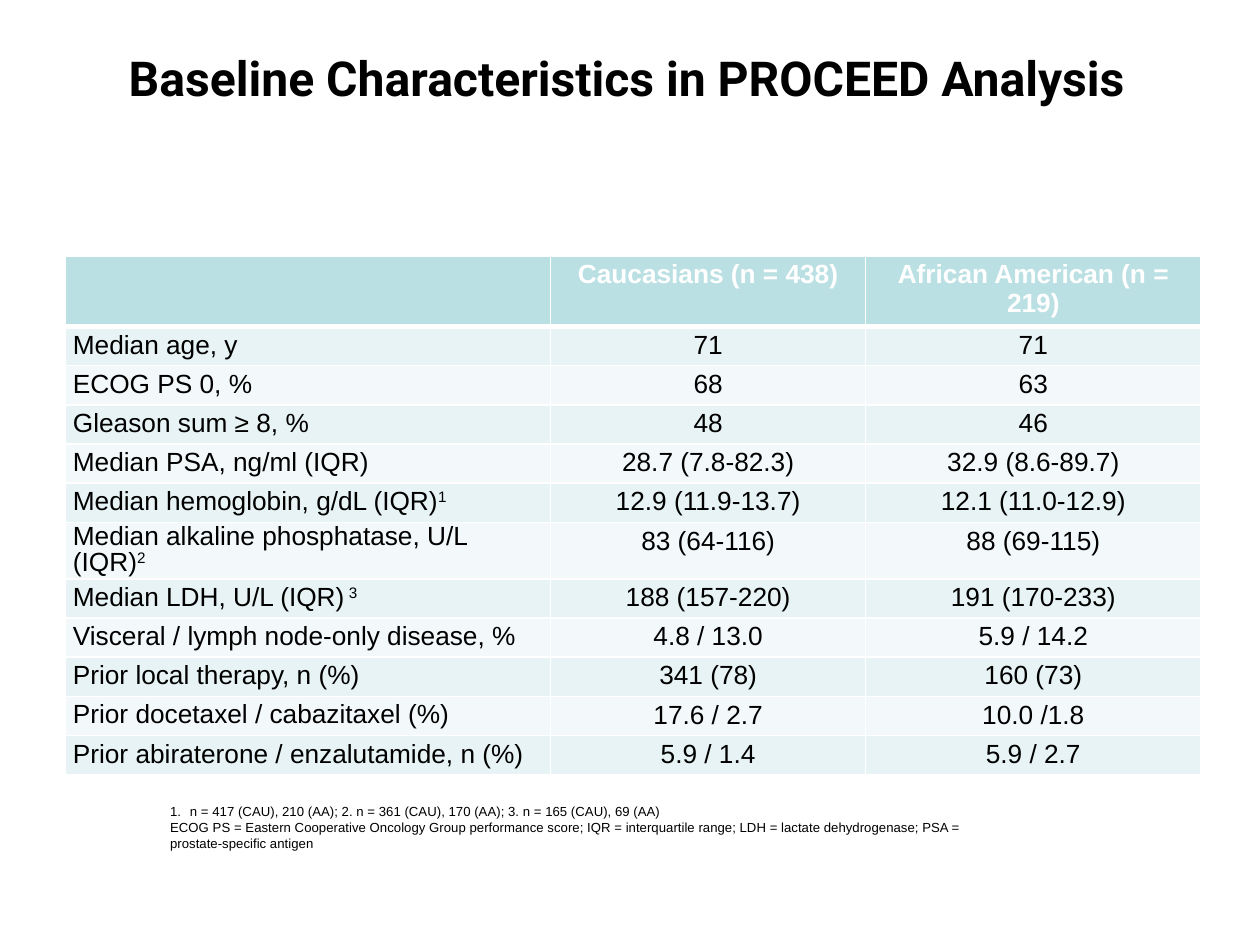
import pptx
import pptx.dml.color
import pptx.enum.text
import pptx.oxml
import pptx.oxml.ns
import pptx.util
from pptx.util import Cm

RGBColor = pptx.dml.color.RGBColor
BLACK = RGBColor(0x00, 0x00, 0x00)
WHITE = RGBColor(0xFF, 0xFF, 0xFF)
HEADER = RGBColor(0xBB, 0xE0, 0xE3)
BANDS = (RGBColor(0xE7, 0xF3, 0xF4), RGBColor(0xF3, 0xF9, 0xFA))

ROWS = [
    ("", "Caucasians (n = 438)", "African American (n = 219)"),
    ("Median age, y", "71", "71"),
    ("ECOG PS 0, %", "68", "63"),
    ("Gleason sum ≥ 8, %", "48", "46"),
    ("Median PSA, ng/ml (IQR)", "28.7 (7.8-82.3)", "32.9 (8.6-89.7)"),
    ("Median hemoglobin, g/dL (IQR)^1", "12.9 (11.9-13.7)", "12.1 (11.0-12.9)"),
    ("Median alkaline phosphatase, U/L (IQR)^2", "83 (64-116)", "88 (69-115)"),
    ("Median LDH, U/L (IQR)^ 3", "188 (157-220)", "191 (170-233)"),
    ("Visceral / lymph node-only disease, %", "4.8 / 13.0", "5.9 / 14.2"),
    ("Prior local therapy, n (%)", "341 (78)", "160 (73)"),
    ("Prior docetaxel / cabazitaxel (%)", "17.6 / 2.7", "10.0 /1.8"),
    ("Prior abiraterone / enzalutamide, n (%)", "5.9 / 1.4", "5.9 / 2.7"),
]
COLUMN_WIDTHS = (9.78, 6.35, 6.76)
HEADER_HEIGHT, ROW_HEIGHT, TALL_HEIGHT = 1.42, 0.79, 1.14
TALL_ROW = 6
FIRST_TIGHT_ROW = 5
NOTES = [
    "n = 417 (CAU), 210 (AA); 2. n = 361 (CAU), 170 (AA); 3. n = 165 (CAU), 69 (AA)",
    "ECOG PS = Eastern Cooperative Oncology Group performance score; IQR = interquartile range; "
    "LDH = lactate dehydrogenase; PSA = prostate-specific antigen",
]


class Deck:
    """Holds the text style and the current slide."""

    def __init__(self, prs, font="Arial"):
        self.s = prs.slides.add_slide(prs.slide_layouts[5])
        self.font = font

    def style(self, p, size, color=BLACK, bold=False, font=None):
        for r in p.runs:
            r.font.name = font or self.font
            r.font.size = pptx.util.Pt(size)
            r.font.bold = bold
            r.font.color.rgb = color

    def title(self, text, x, y, w, h):
        sp = self.s.shapes.title
        sp.left, sp.top, sp.width, sp.height = Cm(x), Cm(y), Cm(w), Cm(h)
        tf = sp.text_frame
        tf.text = text
        tf.vertical_anchor = pptx.enum.text.MSO_ANCHOR.TOP
        p = tf.paragraphs[0]
        p.alignment = pptx.enum.text.PP_ALIGN.LEFT
        self.style(p, 27.5, bold=True, font="Roboto")

    def borders(self, cell, top, bottom):
        tcPr = cell._tc.get_or_add_tcPr()
        for side, width in (("L", 1), ("R", 1), ("T", top), ("B", bottom)):
            tcPr.append(pptx.oxml.parse_xml(
                f'<a:ln{side} {pptx.oxml.ns.nsdecls("a")} w="{pptx.util.Pt(width)}">'
                f'<a:solidFill><a:srgbClr val="{WHITE}"/></a:solidFill></a:ln{side}>'))

    def cell(self, cell, text, row, col):
        header = row == 0
        tight = col == 0 and row >= FIRST_TIGHT_ROW
        self.borders(cell, 3 if row == 1 else 1, 3 if header else 1)
        cell.fill.solid()
        cell.fill.fore_color.rgb = HEADER if header else BANDS[(row - 1) % 2]
        cell.margin_left = cell.margin_right = Cm(0.15)
        cell.margin_top = cell.margin_bottom = Cm(0 if tight else 0.08)
        p = cell.text_frame.paragraphs[0]
        main, _, mark = text.partition("^")
        p.text = main
        if mark:
            r = p.add_run()
            r.text = mark
            r._r.get_or_add_rPr().set("baseline", "30000")
        if tight:
            cell.vertical_anchor = pptx.enum.text.MSO_ANCHOR.MIDDLE
            p.line_spacing = 0.9
        if col:
            p.alignment = pptx.enum.text.PP_ALIGN.CENTER
        self.style(p, 15, WHITE if header else BLACK, header)

    def table(self, rows, widths, heights, x, y):
        table = self.s.shapes.add_table(
            len(rows), len(widths), Cm(x), Cm(y), Cm(sum(widths)), Cm(sum(heights))).table
        for column, width in zip(table.columns, widths):
            column.width = Cm(width)
        for i, (texts, height) in enumerate(zip(rows, heights)):
            table.rows[i].height = Cm(height)
            for j, text in enumerate(texts):
                self.cell(table.cell(i, j), text, i, j)

    def notes(self, lines, x, y, w, h):
        tf = self.s.shapes.add_textbox(Cm(x), Cm(y), Cm(w), Cm(h)).text_frame
        tf.word_wrap = True
        tf.text = "\n".join(lines)
        pPr = tf.paragraphs[0]._p.get_or_add_pPr()
        pPr.set("marL", str(Cm(0.4)))
        pPr.set("indent", str(-Cm(0.4)))
        pPr.append(pptx.oxml.parse_xml(
            f'<a:buAutoNum {pptx.oxml.ns.nsdecls("a")} type="arabicPeriod"/>'))
        for p in tf.paragraphs:
            self.style(p, 7.5)


def main():
    prs = pptx.Presentation()
    prs.slide_width, prs.slide_height = Cm(25.4), Cm(19.05)
    deck = Deck(prs)
    heights = [ROW_HEIGHT] * len(ROWS)
    heights[0], heights[TALL_ROW] = HEADER_HEIGHT, TALL_HEIGHT
    deck.title("Baseline Characteristics in PROCEED Analysis", 2.34, 0.84, 22.22, 1.85)
    deck.table(ROWS, COLUMN_WIDTHS, heights, 1.32, 5.16)
    deck.notes(NOTES, 3.18, 16.08, 17.35, 1.22)
    prs.save("out.pptx")


if __name__ == "__main__":
    main()
